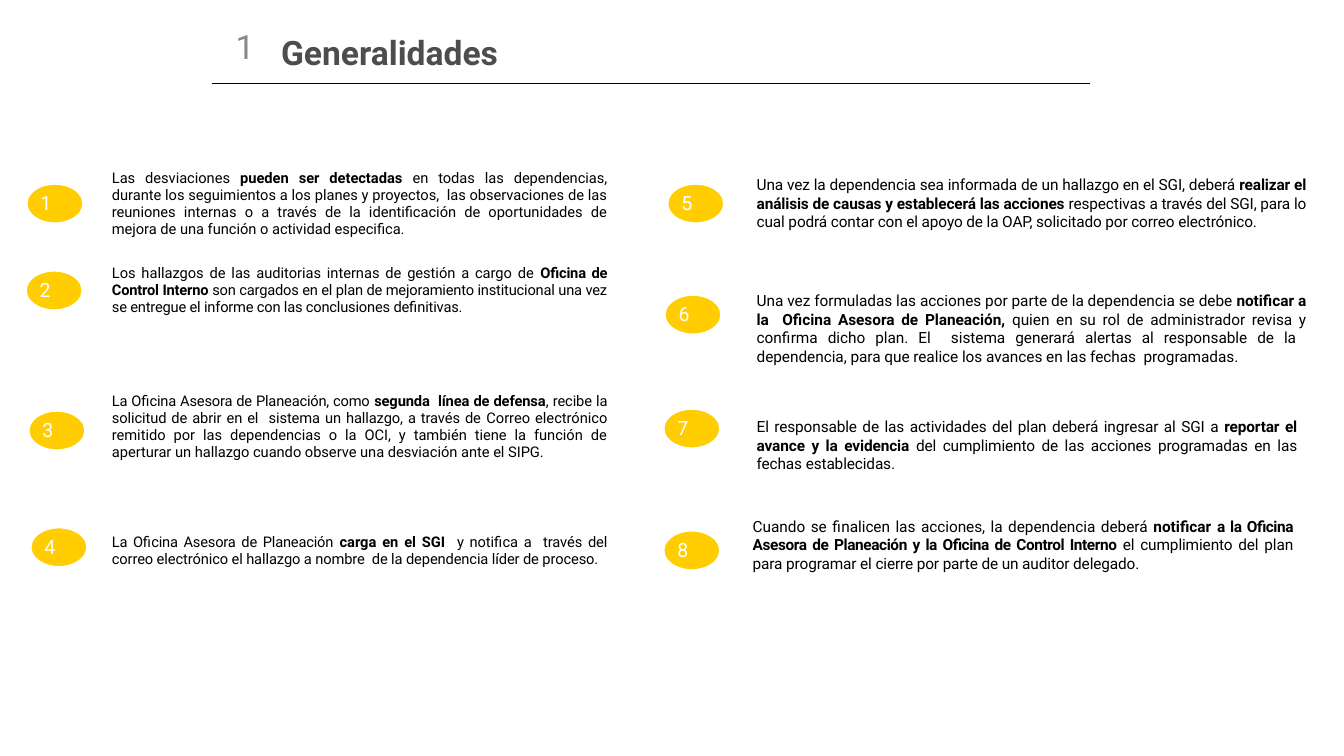
from dataclasses import dataclass

from lxml import etree
from pptx import Presentation
from pptx.dml.color import RGBColor
from pptx.enum.shapes import MSO_CONNECTOR, MSO_SHAPE
from pptx.enum.text import MSO_ANCHOR, MSO_AUTO_SIZE as AUTO, PP_ALIGN as AL
from pptx.oxml.ns import qn
from pptx.util import Cm, Pt


@dataclass(frozen=True)
class Theme:
    font: str = "Roboto"
    yellow: RGBColor = RGBColor(0xFF, 0xCD, 0x00)
    white: RGBColor = RGBColor(0xFF, 0xFF, 0xFF)
    black: RGBColor = RGBColor(0, 0, 0)
    title: RGBColor = RGBColor(0x4D, 0x4D, 0x4D)
    grey: RGBColor = RGBColor(0x88, 0x88, 0x88)
    head_size: float = 24
    badge_size: float = 14
    left_size: float = 10.5
    right_size: float = 11


T = Theme()


def add_run(p, text, size, color, bold=False, spacing=0):
    r = p.add_run()
    r.text = text
    f = r.font
    f.name, f.size, f.bold = T.font, Pt(size), bold
    f.color.rgb = color
    if spacing:
        r._r.get_or_add_rPr().set("spc", str(spacing))


def set_indent(p, left):
    pPr = p._p.get_or_add_pPr()
    pPr.set("marL", str(Cm(left)))
    pPr.set("indent", "0")
    return pPr


prs = Presentation()
prs.slide_width, prs.slide_height = Cm(33.87), Cm(19.05)
s = prs.slides.add_slide(prs.slide_layouts[1])

# Heading: rule, title and section number
rule = s.shapes.add_connector(MSO_CONNECTOR.STRAIGHT, Cm(5.33), Cm(2.11), Cm(27.48), Cm(2.11))
rule.line.color.rgb, rule.line.width = T.black, Pt(1)
etree.SubElement(rule._element.spPr, qn("a:effectLst"))

title, section = s.shapes.title, s.placeholders[1]
for ph, box, text, color, bold, align, anchor in (
    (title, (6.83, 0.66, 20.65, 1.45), "Generalidades", T.title, True, AL.LEFT, MSO_ANCHOR.MIDDLE),
    (section, (5.31, 0.64, 1.73, 1.47), "1", T.grey, False, AL.CENTER, MSO_ANCHOR.TOP),
):
    ph.left, ph.top, ph.width, ph.height = map(Cm, box)
    tf = ph.text_frame
    tf.auto_size, tf.vertical_anchor, tf.word_wrap = AUTO.NONE, anchor, True
    p = tf.paragraphs[0]
    etree.SubElement(set_indent(p, 0), qn("a:buNone"))
    p.alignment, p.line_spacing, p.space_before = align, 0.9, Pt(0)
    add_run(p, text, T.head_size, color, bold)

# Steps 1 to 4: (row height, top margin, paragraphs of (text, bold, spacing))
rows = [
    (5.56, 0.13, [
        [("Las desviaciones ", False, 0), ("pueden ser detectadas ", True, 0),
         ("en todas las dependencias, durante los seguimientos a los planes y proyectos,  las "
          "observaciones de las reuniones internas o a través de la identificación de "
          "oportunidades de mejora de una función o actividad especifica. ", False, 0)],
        [("Los hallazgos de las auditorias internas de gestión a cargo de ", False, 0),
         ("Oficina de Control Interno ", True, -10),
         ("son cargados en el plan de mejoramiento institucional una vez se entregue el "
          "informe con las conclusiones definitivas.", False, -10)],
    ]),
    (3.53, 0.2, [
        [("La Oficina Asesora de Planeación, como ", False, -10),
         ("segunda  línea de defensa", True, -5),
         (", recibe la solicitud de abrir en el  sistema un hallazgo, a través de", False, -5),
         (" Correo electrónico remitido por las dependencias o la OCI, y también tiene la "
          "función de aperturar un hallazgo cuando observe una desviación ante el SIPG.",
          False, 0)],
    ]),
    (1.96, 0.23, [
        [("La Oficina Asesora de Planeación ", False, -10), ("carga en el SGI  ", True, 0),
         ("y notifica a  través del correo electrónico el hallazgo a nombre  de la "
          "dependencia líder de proceso.", False, -5)],
    ]),
    (0.69, 0, []),
]
gf = s.shapes.add_table(len(rows), 1, Cm(2.54), Cm(4.14), Cm(13), Cm(sum(r[0] for r in rows)))
tbl = gf.table
tbl.first_row = tbl.horz_banding = False
for i, (height, top, paras) in enumerate(rows):
    tbl.rows[i].height = Cm(height)
    cell = tbl.cell(i, 0)
    cell.fill.solid()
    cell.fill.fore_color.rgb = T.white
    cell.margin_left = cell.margin_bottom = 0
    cell.margin_top, cell.margin_right = Cm(top), Cm(0.23)
    tf = cell.text_frame
    for j, runs in enumerate(paras):
        p = tf.add_paragraph() if j else tf.paragraphs[0]
        set_indent(p, 0.28)
        p.alignment, p.space_before = AL.JUSTIFY, Pt(19 if j else 0)
        for text, bold, spacing in runs:
            add_run(p, text, T.left_size, T.black, bold, spacing)

# Steps 5 to 8: (left, top, width, height, runs)
steps = [
    (18.82, 4.29, 14.1, 2.01, [
        ("Una vez la dependencia sea informada de un hallazgo en el SGI, deberá ", False, -10),
        ("realizar el análisis de causas y establecerá las acciones", True, -10),
        (" respectivas a través del SGI, para lo cual podrá contar con el apoyo de la OAP, "
         "solicitado por correo electrónico.", False, -10)]),
    (18.82, 7.21, 14.1, 2.01, [
        ("Una vez formuladas las acciones por parte de la dependencia se debe ", False, -5),
        ("notificar a la  Oficina Asesora de Planeación,", True, -5),
        (" quien en su rol de administrador revisa y confirma dicho plan. El  sistema generará "
         "alertas al responsable de la  dependencia, para que realice los avances en las "
         "fechas  programadas.", False, -5)]),
    (18.82, 10.39, 13.87, 1.52, [
        ("El responsable de las actividades del plan deberá ingresar al SGI a ", False, -10),
        ("reportar el avance y la evidencia", True, -10),
        (" del cumplimiento de las acciones programadas en las fechas establecidas. ",
         False, -10)]),
    (18.72, 12.9, 13.87, 1.52, [
        ("Cuando se finalicen las acciones, la dependencia deberá ", False, -5),
        ("notificar ", True, 0),
        ("a la Oficina Asesora de Planeación y la Oficina de Control Interno ", True, -30),
        ("el cumplimiento del plan para programar el cierre por parte de un auditor delegado. ",
         False, -10)]),
]
for left, top, width, height, runs in steps:
    sp = s.shapes.add_textbox(Cm(left), Cm(top), Cm(width), Cm(height))
    sp.fill.solid()
    sp.fill.fore_color.rgb = T.white
    tf = sp.text_frame
    tf.word_wrap, tf.auto_size = True, AUTO.SHAPE_TO_FIT_TEXT
    tf.margin_left = tf.margin_right = tf.margin_bottom = 0
    tf.margin_top = Cm(0.13)
    p = tf.paragraphs[0]
    set_indent(p, 0.25)
    p.alignment = AL.JUSTIFY
    for text, bold, spacing in runs:
        add_run(p, text, T.right_size, T.black, bold, spacing)

# Numbered badges
badges = [(0.66, 4.62), (0.64, 6.81), (0.71, 10.34), (0.76, 13.28),
          (16.81, 4.62), (16.74, 7.42), (16.71, 10.29), (16.71, 13.36)]
for n, (x, y) in enumerate(badges, 1):
    oval = s.shapes.add_shape(MSO_SHAPE.OVAL, Cm(x), Cm(y), Cm(1.45), Cm(1.02))
    oval.shadow.inherit = False
    oval.fill.solid()
    oval.fill.fore_color.rgb = T.yellow
    oval.line.color.rgb, oval.line.width = T.white, Pt(2)
    tf = s.shapes.add_textbox(Cm(x + 0.33), Cm(y + 0.16), Cm(0.48), Cm(0.64)).text_frame
    tf.word_wrap, tf.auto_size = True, AUTO.SHAPE_TO_FIT_TEXT
    tf.margin_left = tf.margin_right = tf.margin_bottom = 0
    tf.margin_top = Cm(0.03)
    p = tf.paragraphs[0]
    set_indent(p, 0.03)
    add_run(p, str(n), T.badge_size, T.white)

prs.save("out.pptx")
